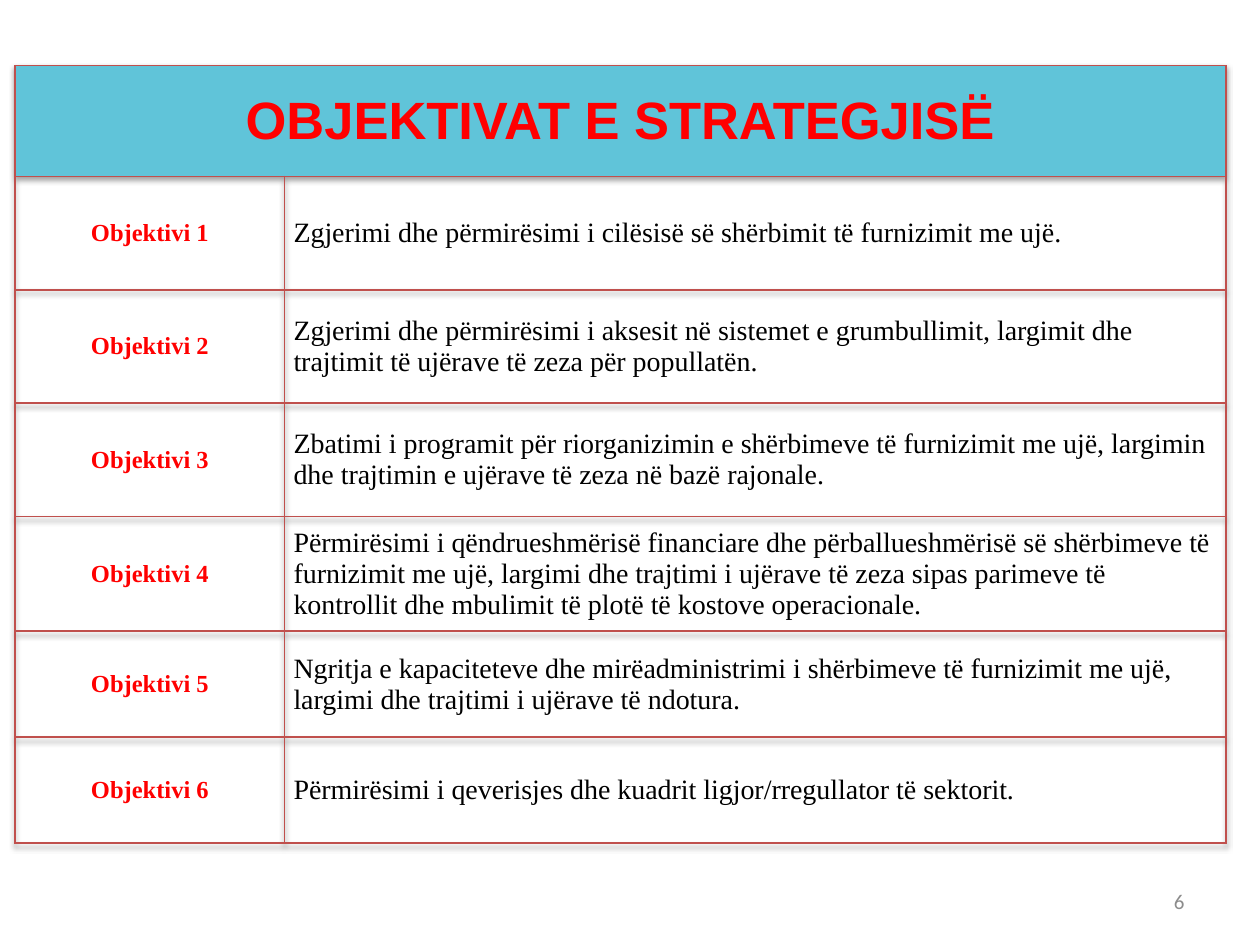
from lxml import etree
from pptx import Presentation
from pptx.dml.color import RGBColor
from pptx.enum import text
from pptx.oxml import parse_xml
from pptx.oxml.ns import nsdecls
from pptx.util import Inches, Pt

RED = RGBColor(0xFF, 0x00, 0x00)
BLACK = RGBColor(0x00, 0x00, 0x00)
GREY = RGBColor(0x8C, 0x8C, 0x8C)
TEAL = RGBColor(0x60, 0xC4, 0xD9)
BORDER = RGBColor(0xC0, 0x50, 0x4D)

SERIF = "Times New Roman"
COL_WIDTHS = [2.14, 7.47]
ROW_HEIGHTS = [0.88, 0.9, 0.9, 0.9, 0.91, 0.84, 0.84]
TITLE = "OBJEKTIVAT E STRATEGJISË"
OBJECTIVES = [
    "Zgjerimi dhe përmirësimi i cilësisë së shërbimit të furnizimit me ujë.",
    "Zgjerimi dhe përmirësimi i aksesit në sistemet e grumbullimit, largimit dhe "
    "trajtimit të ujërave të zeza për popullatën.",
    "Zbatimi i programit për riorganizimin e shërbimeve të furnizimit me ujë, "
    "largimin dhe trajtimin e ujërave të zeza në bazë rajonale.",
    "Përmirësimi i qëndrueshmërisë financiare dhe përballueshmërisë së shërbimeve të "
    "furnizimit me ujë, largimi dhe trajtimi i ujërave të zeza sipas parimeve të "
    "kontrollit dhe mbulimit të plotë të kostove operacionale.",
    "Ngritja e kapaciteteve dhe mirëadministrimi i shërbimeve të furnizimit me ujë, "
    "largimi dhe trajtimi i ujërave të ndotura.",
    "Përmirësimi i qeverisjes dhe kuadrit ligjor/rregullator të sektorit.",
]


def write(tf, words, font, size, color, align, bold=False):
    p = tf.paragraphs[0]
    p.alignment = align
    p.add_run().text = words
    p.font.name = font
    p.font.size = Pt(size)
    p.font.bold = bold
    p.font.color.rgb = color
    return p


def add_borders(cell):
    # Border lines must come before the fill in the cell properties
    tc_pr = cell._tc.get_or_add_tcPr()
    for i, side in enumerate(("lnL", "lnR", "lnT", "lnB")):
        tc_pr.insert(i, parse_xml(
            f'<a:{side} {nsdecls("a")} w="{Pt(1)}"><a:solidFill>'
            f'<a:srgbClr val="{BORDER}"/></a:solidFill></a:{side}>'))


def format_cell(cell):
    cell.vertical_anchor = text.MSO_ANCHOR.MIDDLE
    cell.margin_left = cell.margin_right = Inches(0.07)
    cell.margin_top = cell.margin_bottom = 0
    cell.fill.background()
    add_borders(cell)


def add_shadow(table):
    effects = parse_xml(
        f'<a:effectLst {nsdecls("a")}><a:outerShdw blurRad="{Inches(0.04)}" '
        f'dist="{Inches(0.03)}" dir="5400000" rotWithShape="0">'
        '<a:srgbClr val="000000"><a:alpha val="38000"/></a:srgbClr>'
        '</a:outerShdw></a:effectLst>')
    table._tbl.tblPr.insert(0, effects)


def add_objectives_table(s):
    frame = s.shapes.add_table(
        len(ROW_HEIGHTS), len(COL_WIDTHS), Inches(0.12), Inches(0.52),
        Inches(sum(COL_WIDTHS)), Inches(sum(ROW_HEIGHTS)))
    table = frame.table
    table.first_row = table.horz_banding = False
    for column, width in zip(table.columns, COL_WIDTHS):
        column.width = Inches(width)
    for row, height in zip(table.rows, ROW_HEIGHTS):
        row.height = Inches(height)
    for cell in table.iter_cells():
        format_cell(cell)
    add_shadow(table)

    # Title row
    title = table.cell(0, 0)
    title.merge(table.cell(0, 1))
    title.fill.solid()
    title.fill.fore_color.rgb = TEAL
    write(title.text_frame, TITLE, "Arial", 30, RED, text.PP_ALIGN.CENTER, True)

    # One row per objective
    for i, objective in enumerate(OBJECTIVES, start=1):
        write(table.cell(i, 0).text_frame, f"Objektivi {i}", SERIF, 14, RED,
              text.PP_ALIGN.CENTER, True)
        p = write(table.cell(i, 1).text_frame, objective, SERIF, 16, BLACK,
                  text.PP_ALIGN.LEFT)
        p.space_before = p.space_after = Pt(3)


def add_page_number(s):
    box = s.shapes.add_textbox(Inches(7.17), Inches(6.95), Inches(2.33), Inches(0.4))
    tf = box.text_frame
    tf.word_wrap = True
    tf.vertical_anchor = text.MSO_ANCHOR.MIDDLE
    write(tf, "6", "Calibri", 12, GREY, text.PP_ALIGN.RIGHT)


def main():
    prs = Presentation()
    prs.slide_width, prs.slide_height = Inches(10), Inches(7.5)
    s = prs.slides.add_slide(prs.slide_layouts[6])
    add_objectives_table(s)
    add_page_number(s)
    prs.save("out.pptx")


if __name__ == "__main__":
    main()
